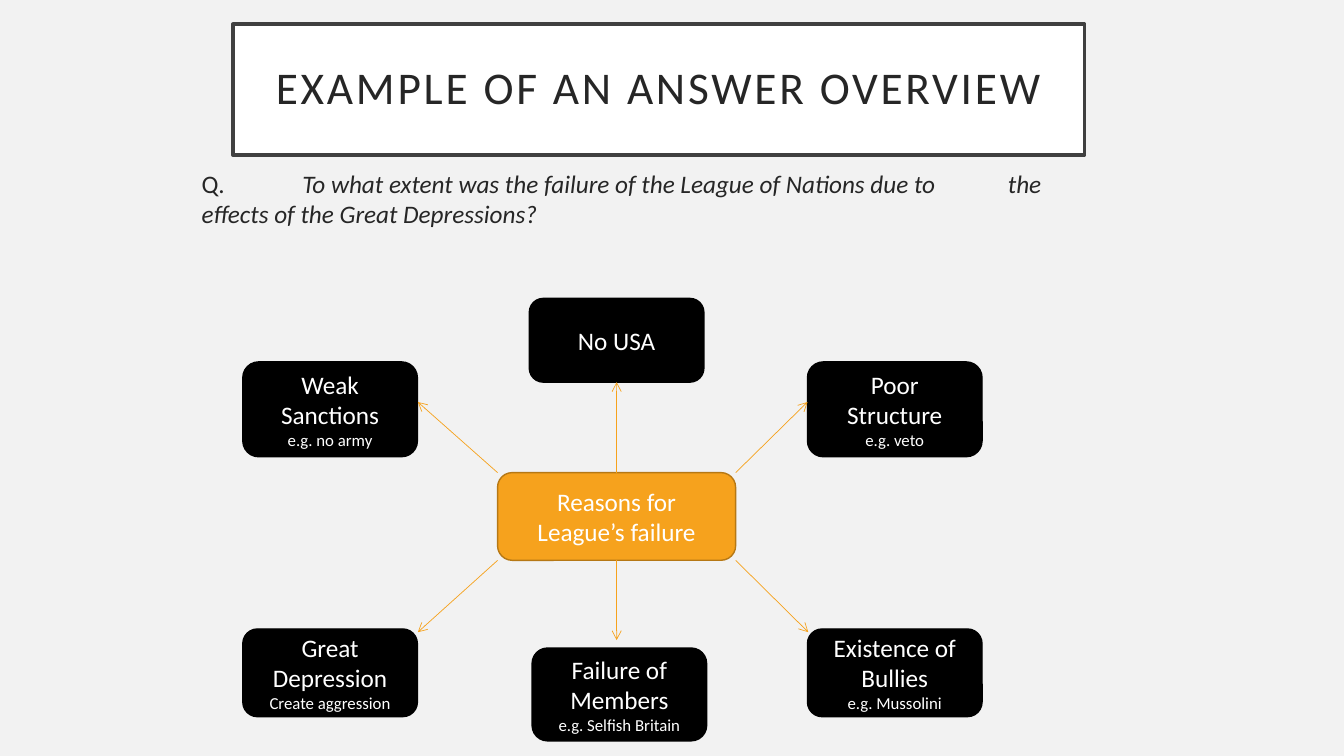
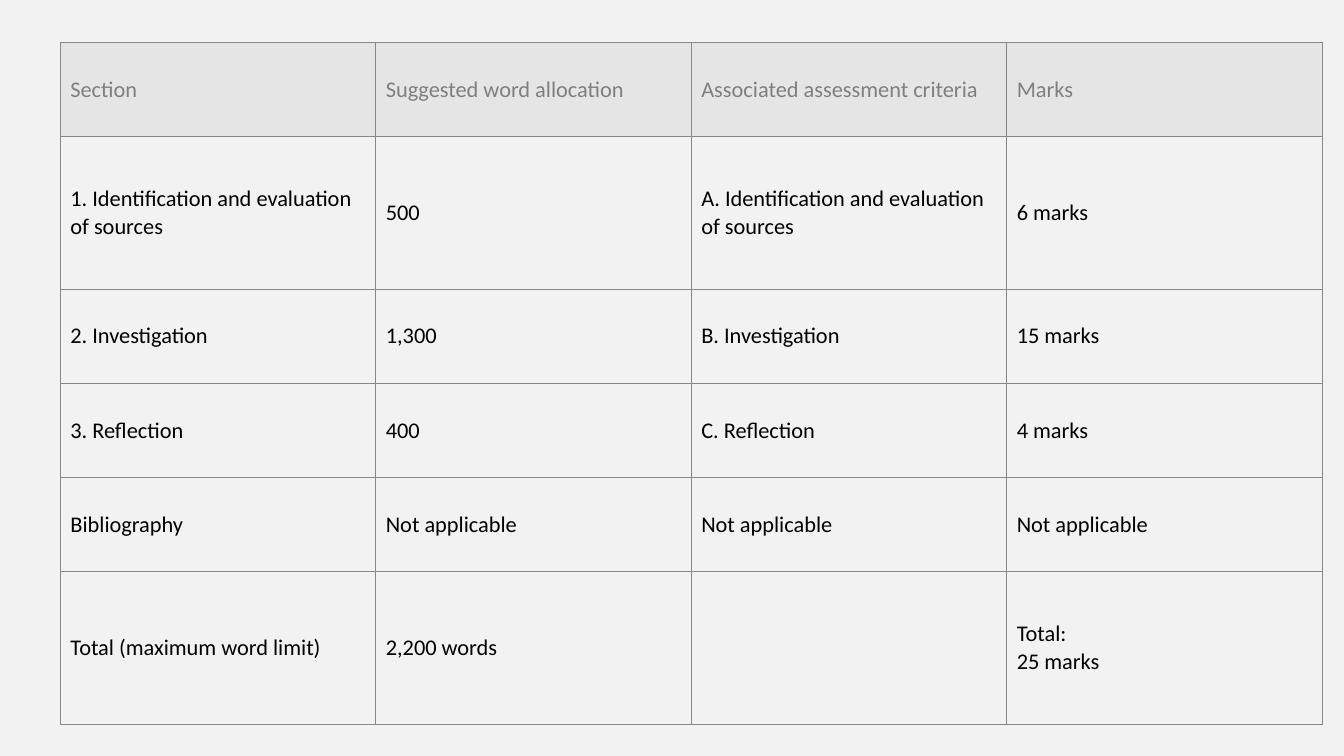
from pptx import Presentation
from pptx.dml.color import RGBColor
from pptx.enum.shapes import MSO_CONNECTOR, MSO_SHAPE
from pptx.enum.text import MSO_ANCHOR, MSO_AUTO_SIZE, PP_ALIGN
from pptx.oxml.ns import qn
from pptx.util import Cm, Pt
from lxml import etree

STRAIGHT = MSO_CONNECTOR.STRAIGHT
ROUNDED = MSO_SHAPE.ROUNDED_RECTANGLE
MIDDLE = MSO_ANCHOR.MIDDLE
CENTER = PP_ALIGN.CENTER
TOP, BOTTOM = 0, 2

FONT = "Calibri"
BACKGROUND = RGBColor(0xF2, 0xF2, 0xF2)
WHITE = RGBColor(0xFF, 0xFF, 0xFF)
BLACK = RGBColor(0x00, 0x00, 0x00)
INK = RGBColor(0x26, 0x26, 0x26)
FRAME = RGBColor(0x40, 0x40, 0x40)
ORANGE = RGBColor(0xF6, 0xA2, 0x1D)
DARK_ORANGE = RGBColor(0xB6, 0x78, 0x15)
HEADER_FILL = RGBColor(0xE5, 0xE5, 0xE5)
HEADER_TEXT = RGBColor(0x7F, 0x7F, 0x7F)
GRID = "888888"


def set_font(paragraph, size, color):
    paragraph.font.name = FONT
    paragraph.font.size = Pt(size)
    paragraph.font.color.rgb = color


def add_box(slide, left, top, width, height, lines, fill, outline):
    box = slide.shapes.add_shape(ROUNDED, Cm(left), Cm(top), Cm(width), Cm(height))
    box.shadow.inherit = False
    box.fill.solid()
    box.fill.fore_color.rgb = fill
    box.line.color.rgb = outline
    box.line.width = Pt(1)
    frame = box.text_frame
    frame.word_wrap = True
    frame.vertical_anchor = MIDDLE
    frame.text = "\n".join(lines)
    for paragraph, size in zip(frame.paragraphs, (18, 12)):
        paragraph.alignment = CENTER
        set_font(paragraph, size, WHITE)
    return box


prs = Presentation()
prs.slide_width, prs.slide_height = Cm(33.87), Cm(19.05)
master_fill = prs.slide_master.background.fill
master_fill.solid()
master_fill.fore_color.rgb = BACKGROUND
title_only, blank = prs.slide_layouts[5], prs.slide_layouts[6]

# Slide 1: answer overview
overview = prs.slides.add_slide(title_only)

# Framed title
title = overview.shapes.title
title.left, title.top, title.width, title.height = Cm(5.87), Cm(0.61), Cm(21.46), Cm(3.3)
title.fill.solid()
title.fill.fore_color.rgb = WHITE
title.line.color.rgb = FRAME
title.line.width = Pt(2.5)
heading = title.text_frame
heading.text = "EXAMPLE OF AN ANSWER OVERVIEW"
heading.auto_size = MSO_AUTO_SIZE.NONE
heading.word_wrap = True
heading.vertical_anchor = MIDDLE
heading.margin_left = heading.margin_right = Cm(0.51)
heading.margin_top = heading.margin_bottom = Cm(0.51)
heading_line = heading.paragraphs[0]
heading_line.alignment = CENTER
heading_line.line_spacing = 0.9
set_font(heading_line, 32.4, INK)
heading_line.runs[0].font._element.set("spc", "200")

# Question, with tab stops one and eight inches in
question = overview.shapes.add_textbox(Cm(4.52), Cm(4.11), Cm(22.81), Cm(13.67)).text_frame
question.word_wrap = True
question.margin_left = Cm(0.56)
question_line = question.paragraphs[0]
tab_stops = etree.SubElement(question_line._p.get_or_add_pPr(), qn("a:tabLst"))
for stop in (2.54, 20.32):
    etree.SubElement(tab_stops, qn("a:tab"), pos=str(int(Cm(stop))), algn="l")
set_font(question_line, 18, INK)
question_line.add_run().text = "Q.\t"
wording = question_line.add_run()
wording.text = ("To what extent was the failure of the League of Nations due to\t"
                "the effects of the Great Depressions?")
wording.font.italic = True

# Central topic
HUB_LEFT, HUB_TOP, HUB_WIDTH, HUB_HEIGHT = 12.54, 11.91, 6, 2.21
HUB_RIGHT, HUB_BOTTOM = HUB_LEFT + HUB_WIDTH, HUB_TOP + HUB_HEIGHT
HUB_MIDDLE = HUB_LEFT + HUB_WIDTH / 2
hub = add_box(overview, HUB_LEFT, HUB_TOP, HUB_WIDTH, HUB_HEIGHT,
              ["Reasons for League’s failure"], ORANGE, DARK_ORANGE)

# Reasons: left, top, height, lines, arrow start, arrow end, hub side, reason side
REASON_WIDTH = 4.4
reasons = [
    (6.12, 9.12, 2.39, ["Weak Sanctions", "e.g. no army"],
     (HUB_LEFT, HUB_TOP), (10.53, 10.13), None, None),
    (13.34, 7.52, 2.11, ["No USA"],
     (HUB_MIDDLE, HUB_TOP), (HUB_MIDDLE, 9.63), TOP, BOTTOM),
    (20.35, 9.12, 2.39, ["Poor Structure", "e.g. veto"],
     (HUB_RIGHT, HUB_TOP), (20.35, 10.13), None, None),
    (6.12, 15.85, 2.21, ["Great Depression", "Create aggression"],
     (HUB_LEFT, HUB_BOTTOM), (10.53, 15.93), None, None),
    (13.41, 16.33, 2.34, ["Failure of Members", "e.g. Selfish Britain"],
     (HUB_MIDDLE, HUB_BOTTOM), (HUB_MIDDLE, 16.13), BOTTOM, None),
    (20.35, 15.85, 2.21, ["Existence of Bullies", "e.g. Mussolini"],
     (HUB_RIGHT, HUB_BOTTOM), (20.37, 15.93), None, None),
]
for left, top, height, lines, start, end, hub_side, reason_side in reasons:
    reason = add_box(overview, left, top, REASON_WIDTH, height, lines, BLACK, BLACK)
    arrow = overview.shapes.add_connector(STRAIGHT, *map(Cm, start + end))
    if hub_side is not None:
        arrow.begin_connect(hub, hub_side)
    if reason_side is not None:
        arrow.end_connect(reason, reason_side)
    arrow.line.color.rgb = ORANGE
    arrow.line.width = Pt(0.5)
    arrow_properties = arrow._element.spPr
    etree.SubElement(arrow_properties.find(qn("a:ln")), qn("a:tailEnd"), type="arrow")
    etree.SubElement(arrow_properties, qn("a:effectLst"))

# Slide 2: word allocation and marks
allocation = prs.slides.add_slide(blank)
rows = [
    ("Section", "Suggested word allocation", "Associated assessment criteria", "Marks"),
    ("1. Identification and evaluation of sources", "500",
     "A. Identification and evaluation of sources", "6 marks"),
    ("2. Investigation", "1,300", "B. Investigation", "15 marks"),
    ("3. Reflection", "400", "C. Reflection", "4 marks"),
    ("Bibliography", "Not applicable", "Not applicable", "Not applicable"),
    ("Total (maximum word limit)", "2,200 words", "", "Total:\v25 marks"),
]
ROW_HEIGHTS = [2.37, 3.85, 2.37, 2.37, 2.37, 3.85]
COLUMN_WIDTH = 7.95
marks_table = allocation.shapes.add_table(
    len(rows), len(rows[0]), Cm(1.52), Cm(1.07),
    Cm(COLUMN_WIDTH * len(rows[0])), Cm(sum(ROW_HEIGHTS))).table
marks_table.first_row = marks_table.horz_banding = False
for column in marks_table.columns:
    column.width = Cm(COLUMN_WIDTH)

for row_index, (texts, row_height) in enumerate(zip(rows, ROW_HEIGHTS)):
    marks_table.rows[row_index].height = Cm(row_height)
    for column_index, text in enumerate(texts):
        cell = marks_table.cell(row_index, column_index)
        cell.vertical_anchor = MIDDLE
        cell_properties = cell._tc.get_or_add_tcPr()
        for side in ("a:lnL", "a:lnR", "a:lnT", "a:lnB"):
            border = etree.SubElement(cell_properties, qn(side), w=str(int(Pt(0.5))))
            border_fill = etree.SubElement(border, qn("a:solidFill"))
            etree.SubElement(border_fill, qn("a:srgbClr"), val=GRID)
        if row_index == 0:
            cell.fill.solid()
            cell.fill.fore_color.rgb = HEADER_FILL
        else:
            cell.fill.background()
        cell.text_frame.text = text
        set_font(cell.text_frame.paragraphs[0], 16, BLACK if row_index else HEADER_TEXT)

prs.save("out.pptx")
